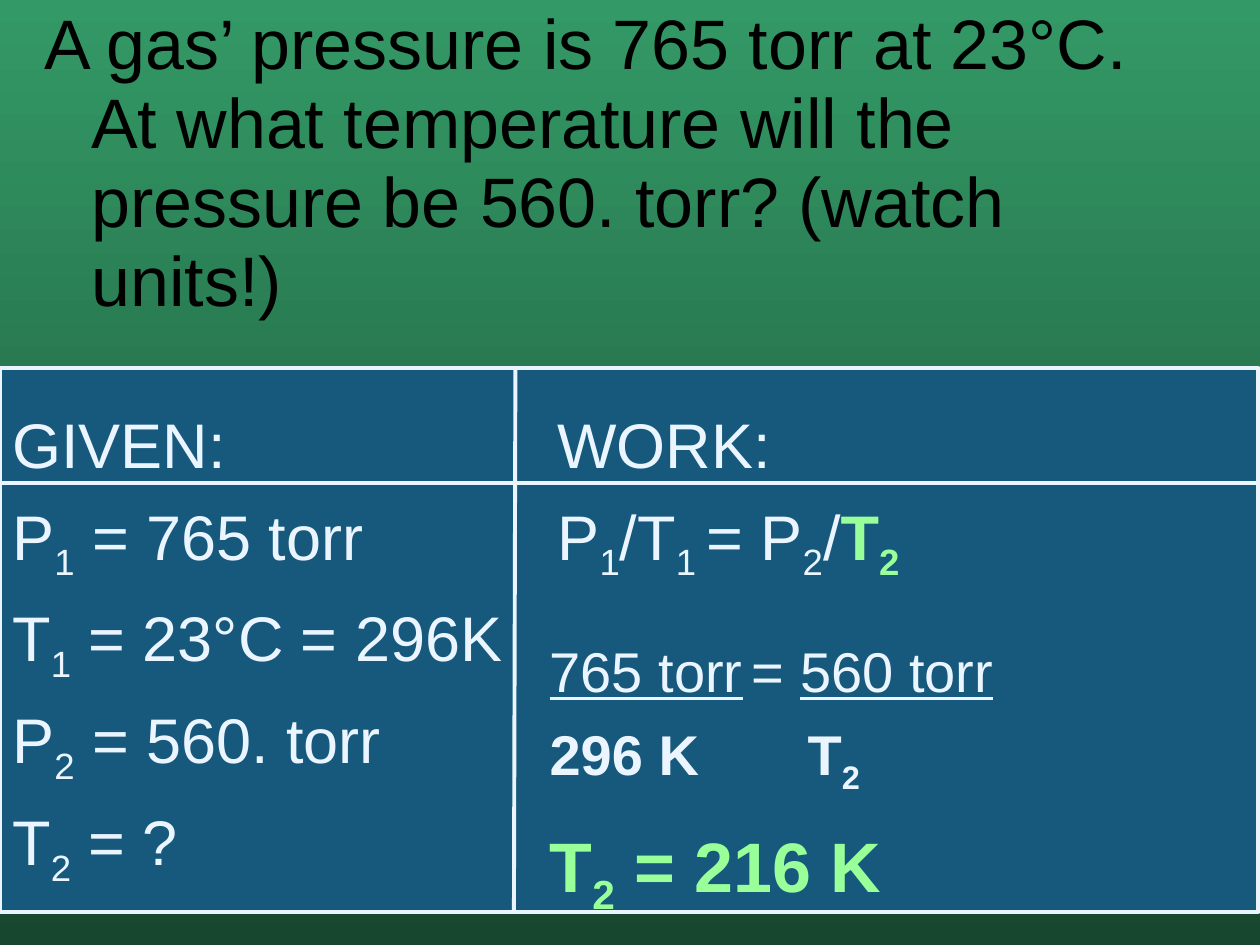
from pptx import Presentation
from pptx.dml.color import RGBColor
from pptx.enum.shapes import MSO_CONNECTOR, MSO_SHAPE
from pptx.enum.text import MSO_ANCHOR, MSO_AUTO_SIZE, PP_ALIGN
from pptx.oxml.ns import qn
from pptx.util import Cm, Pt
from lxml.etree import SubElement

PALE, GREEN, BLUE, BLACK = "EBF5FF", "99FF99", "17597D", "000000"
SUB = {"sub": True}


def colour(value):
    return RGBColor.from_string(value)


def add_span(para, text, size, tint=PALE, bold=False, underline=False, sub=False):
    span = para.add_run()
    span.text = text
    font = span.font
    font.name, font.size, font.bold = "Arial", Pt(size), bold
    font.underline = underline
    font.color.rgb = colour(tint)
    if sub:
        span._r.get_or_add_rPr().set("baseline", "-25000")


def set_frame(frame, inset=0.25):
    frame.word_wrap = True
    frame.auto_size = MSO_AUTO_SIZE.NONE
    frame.vertical_anchor = MSO_ANCHOR.TOP
    frame.margin_left = Cm(inset)
    frame.margin_right = Cm(0.25)
    frame.margin_top = frame.margin_bottom = Cm(0.13)


def add_text(page, left, top, width, height, inset, lines):
    """Each line is (size, space before, line spacing, spans)."""
    box = page.shapes.add_textbox(Cm(left), Cm(top), Cm(width), Cm(height))
    frame = box.text_frame
    set_frame(frame, inset)
    for index, (size, before, spacing, spans) in enumerate(lines):
        para = frame.paragraphs[0] if index == 0 else frame.add_paragraph()
        para.space_before, para.line_spacing = Pt(before), spacing
        for text, style in spans:
            add_span(para, text, size, **style)
    return frame


def add_rule(page, x1, y1, x2, y2):
    rule = page.shapes.add_connector(
        MSO_CONNECTOR.STRAIGHT, Cm(x1), Cm(y1), Cm(x2), Cm(y2))
    rule.line.color.rgb = colour(PALE)
    rule.line.width = Pt(2.25)
    SubElement(rule._element.spPr, qn("a:effectLst"))


def add_question(page, left, top, width, height):
    title = page.shapes.title
    title.left, title.top = Cm(left), Cm(top)
    title.width, title.height = Cm(width), Cm(height)
    set_frame(title.text_frame)
    para = title.text_frame.paragraphs[0]
    para.alignment, para.line_spacing = PP_ALIGN.LEFT, 0.94
    # Hanging indent
    props = para._p.get_or_add_pPr()
    props.set("marL", str(Cm(0.95)))
    props.set("indent", str(-Cm(0.95)))
    add_span(para, "A gas’ pressure is 765 torr at 23°C. At what temperature "
                   "will the pressure be 560. torr? (watch units!)", 40, BLACK)


def add_panel(page, left, top, width, height):
    panel = page.shapes.add_shape(
        MSO_SHAPE.RECTANGLE, Cm(left), Cm(top), Cm(width), Cm(height))
    panel.shadow.inherit = False
    panel.fill.solid()
    panel.fill.fore_color.rgb = colour(BLUE)
    panel.line.color.rgb = colour(PALE)
    panel.line.width = Pt(2.25)
    add_rule(page, left + 10.39, top, left + 10.36, top + height)
    add_rule(page, left, top + 2.31, left + 25.4, top + 2.31)


def add_given(page, left, top, width, height):
    values = [("P", "1", " = 765 torr"), ("T", "1", " = 23°C = 296K"),
              ("P", "2", " = 560. torr"), ("T", "2", " = ?")]
    lines = [(36, 9, 1.0, [("GIVEN:", {})])]
    lines += [(36, 9, 1.0, [(symbol, {}), (number, SUB), (value, {})])
              for symbol, number, value in values]
    add_text(page, left, top, width, height, 0.25, lines)


def add_work(page, left, top, width, height):
    target = {"tint": GREEN, "bold": True}
    # Formula
    add_text(page, left, top, width, 3.63, 1.66, [
        (36, 9, 1.0, [("WORK:", {})]),
        (36, 9, 1.0, [("P", {}), ("1", SUB), ("/T", {}), ("1 ", SUB), ("= P", {}),
                      ("2", SUB), ("/", {}), ("T", target), ("2", target | SUB)]),
    ])
    # Substitution and answer
    bold, under = {"bold": True}, {"underline": True}
    frame = add_text(page, left, top + 4.85, width, height - 4.85, 1.5, [
        (32, 15, 0.75, [("765 torr", under), (" ", SUB), ("= ", {}),
                        ("560 torr", under)]),
        (32, 15, 0.75, [("296 K\tT", bold), ("2", bold | SUB)]),
        (40, 20, 1.0, [("T", target), ("2", target | SUB), (" = 216 K", target)]),
    ])
    # Tab stop that puts T2 under the second pressure
    tabs = SubElement(frame.paragraphs[1]._p.get_or_add_pPr(), qn("a:tabLst"))
    SubElement(tabs, qn("a:tab"), pos=str(Cm(5.2)), algn="l")


def main():
    deck = Presentation()
    deck.slide_width, deck.slide_height = Cm(25.4), Cm(19.05)
    page = deck.slides.add_slide(deck.slide_layouts[5])
    # Background, dark towards the bottom
    fill = page.background.fill
    fill.gradient()
    fill.gradient_angle = 270
    for stop, tint in zip(fill.gradient_stops, ("339966", "18472F")):
        stop.color.rgb = colour(tint)
    add_question(page, 0.64, 0, 23.29, 6.99)
    add_panel(page, 0, 7.42, 25.37, 10.97)
    add_given(page, 0, 8.05, 10.49, 9.8)
    add_work(page, 9.58, 8.05, 15.82, 9.27)
    deck.save("out.pptx")


if __name__ == "__main__":
    main()
